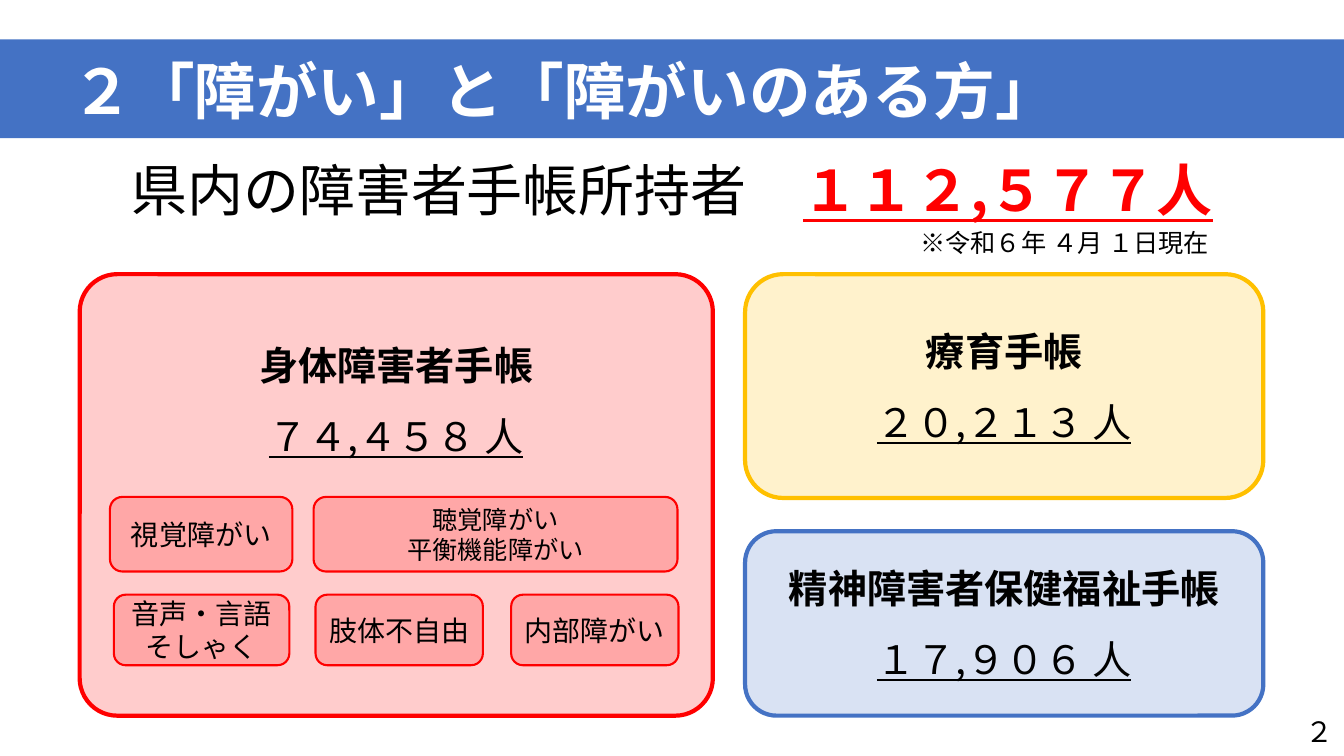
"""Build a slide on holders of disability certificates."""
import pptx
import pptx.util
import pptx.dml.color
import pptx.enum.shapes
import pptx.enum.text
import pptx.oxml.ns
import lxml.etree

Inches = pptx.util.Inches
Shape = pptx.enum.shapes.MSO_SHAPE
Align = pptx.enum.text.PP_ALIGN
Anchor = pptx.enum.text.MSO_ANCHOR
qn = pptx.oxml.ns.qn

COLORS = {"red": "FF0000", "blue": "4472C4", "gold": "FFC000",
          "black": "000000", "white": "FFFFFF"}


class Deck:
    def __init__(self, font):
        self.font = font
        self.show = pptx.Presentation()
        self.show.slide_width = Inches(13.33)
        self.show.slide_height = Inches(7.5)
        self.slide = self.show.slides.add_slide(self.show.slide_layouts[6])

    def color(self, name):
        return pptx.dml.color.RGBColor.from_string(COLORS[name])

    def style(self, run, size, color="black", bold=False, under=False):
        font = run.font
        font.size = pptx.util.Pt(size)
        font.name = self.font
        font.bold = bold
        font.underline = under
        font.color.rgb = self.color(color)
        east = lxml.etree.Element(qn("a:ea"), typeface=self.font)
        run._r.rPr.find(qn("a:latin")).addnext(east)

    def fill(self, frame, lines, align=Align.CENTER):
        for i, (runs, space) in enumerate(lines):
            para = frame.paragraphs[0] if i == 0 else frame.add_paragraph()
            para.alignment = align
            para.line_spacing = space
            for text, look in runs:
                run = para.add_run()
                run.text = text
                self.style(run, **look)

    def frame(self, shape, top=0.05, base=0.05, anchor=Anchor.MIDDLE):
        frame = shape.text_frame
        frame.word_wrap = True
        frame.vertical_anchor = anchor
        frame.margin_top, frame.margin_bottom = Inches(top), Inches(base)
        return frame

    def label(self, place, lines, align=Align.LEFT, anchor=Anchor.TOP):
        box = self.slide.shapes.add_textbox(*map(Inches, place))
        self.fill(self.frame(box, anchor=anchor), lines, align)

    def block(self, kind, place, color, alpha=100, width=0):
        shape = self.slide.shapes.add_shape(kind, *map(Inches, place))
        shape.shadow.inherit = False
        shape.fill.solid()
        shape.fill.fore_color.rgb = self.color(color)
        if alpha < 100:
            tint = shape._element.spPr.find(qn("a:solidFill"))[0]
            lxml.etree.SubElement(tint, qn("a:alpha"), val=str(alpha * 1000))
        if width:
            shape.line.color.rgb = self.color(color)
            shape.line.width = pptx.util.Pt(width)
        else:
            shape.line.fill.background()
        return shape

    def banner(self, place, text):
        shape = self.block(Shape.RECTANGLE, place, "blue")
        look = dict(size=44, color="white", bold=True)
        self.fill(self.frame(shape, 0.12, 0), [([(text, look)], 0.9)], Align.LEFT)

    def card(self, place, color, name, count, round=0.17, **inset):
        shape = self.block(Shape.ROUNDED_RECTANGLE, place, color, 20, 3)
        shape.adjustments[0] = round
        self.fill(self.frame(shape, **inset), [
            ([(name, dict(size=28, bold=True))], 1.0),
            ([(count, dict(size=28, under=True))], 1.5)])

    def chip(self, place, texts, size):
        shape = self.block(Shape.ROUNDED_RECTANGLE, place, "red", 18, 1.5)
        self.fill(self.frame(shape, 0, 0),
                  [([(text, dict(size=size))], 1.0) for text in texts])


def main():
    deck = Deck("Noto Sans CJK JP")
    deck.banner((0, 0.39, 13.33, 0.98), "　２「障がい」と「障がいのある方」")
    deck.label((0, 1.56, 13.33, 0.72), [([
        ("県内の障害者手帳所持者　", dict(size=40)),
        ("１１２,５７７人", dict(size=40, color="red", bold=True, under=True)),
    ], 0.9)], Align.CENTER, Anchor.MIDDLE)
    deck.label((9.03, 2.21, 3.24, 0.4),
               [([("※令和６年 ４月 １日現在", dict(size=18))], 1.0)])

    deck.card((0.79, 2.72, 6.28, 4.38), "red", "身体障害者手帳", "７４,４５８ 人",
              round=0.085, top=0.56, base=0, anchor=Anchor.TOP)
    deck.card((7.39, 2.72, 5.14, 2.22), "gold", "療育手帳", "２０,２１３ 人")
    deck.card((7.39, 5.27, 5.14, 1.83), "blue", "精神障害者保健福祉手帳", "１７,９０６ 人")

    rows = [
        (4.93, 0.74, [(1.09, 1.81, ["視覚障がい"], 20),
                      (3.11, 3.61, ["聴覚障がい", "平衡機能障がい"], 18)]),
        (5.9, 0.7, [(1.13, 1.74, ["音声・言語", "そしゃく"], 20),
                    (3.13, 1.66, ["肢体不自由"], 20),
                    (5.07, 1.66, ["内部障がい"], 20)]),
    ]
    for top, height, chips in rows:
        for left, width, texts, size in chips:
            deck.chip((left, top, width, height), texts, size)

    deck.label((12.85, 7.04, 0.48, 0.44), [([("２", dict(size=20))], 1.0)])
    deck.show.save("out.pptx")


if __name__ == "__main__":
    main()
